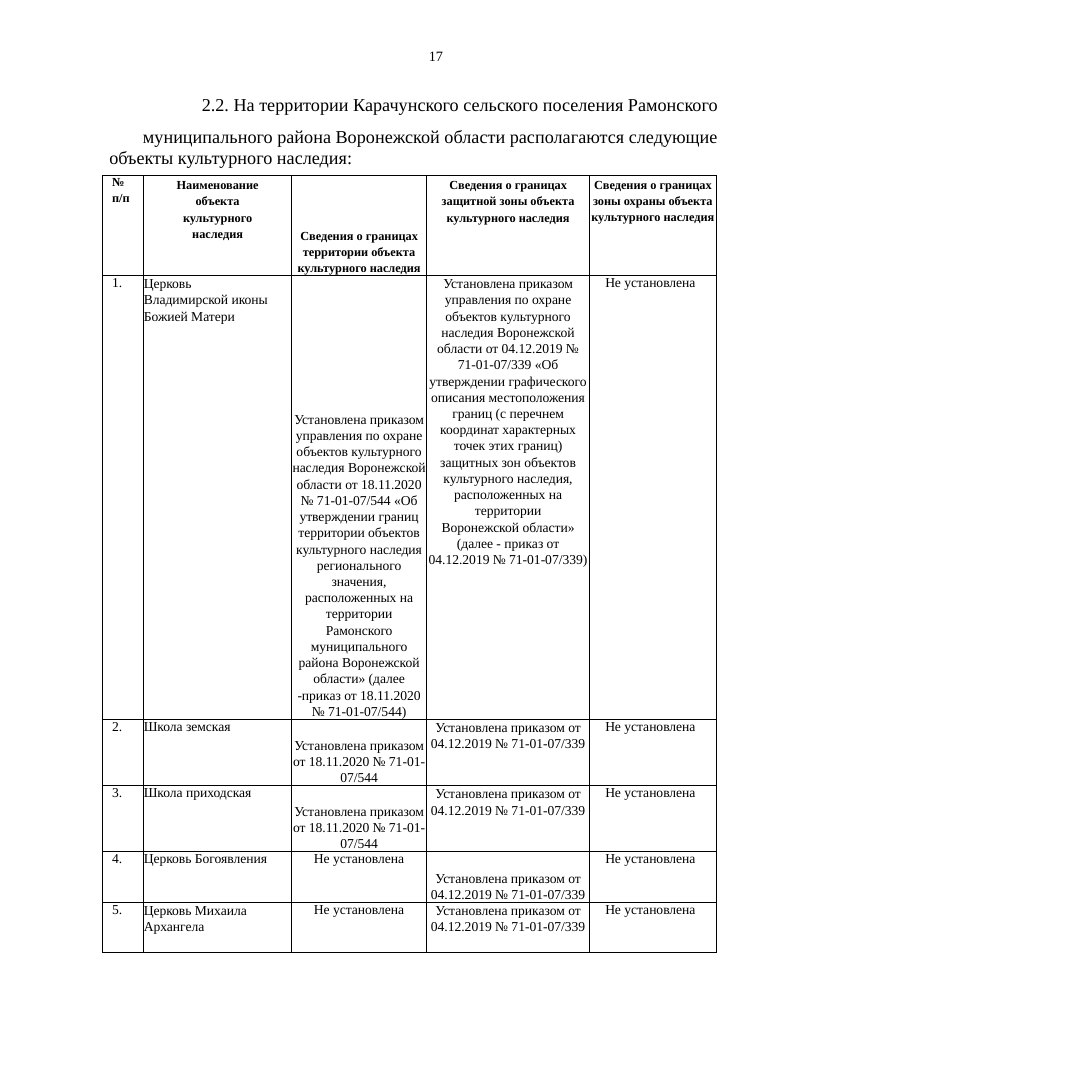
from lxml.etree import SubElement
from pptx import Presentation
from pptx.dml.color import RGBColor
from pptx.enum.text import MSO_ANCHOR, PP_ALIGN
from pptx.oxml.ns import qn
from pptx.util import Inches, Pt

BLACK = RGBColor(0, 0, 0)
FONT = "Times New Roman"
SIDE = 11.69
LEFT, CENTER, RIGHT = PP_ALIGN.LEFT, PP_ALIGN.CENTER, PP_ALIGN.RIGHT

PAGE = "17"
TITLE = ("2.2. На территории Карачунского сельского поселения Рамонского "
         "муниципального района Воронежской области располагаются следующие")
TAIL = "объекты культурного наследия:"

NONE = "Не установлена"
AREA = "Установлена приказом от 18.11.2020 № 71-01-07/544"
ZONE = "Установлена приказом от 04.12.2019 № 71-01-07/339"
AREA_FULL = (
    "Установлена приказом управления по охране объектов культурного наследия "
    "Воронежской области от 18.11.2020 № 71-01-07/544 «Об утверждении границ "
    "территории объектов культурного наследия регионального значения, "
    "расположенных на территории Рамонского муниципального района Воронежской "
    "области» (далее -приказ от 18.11.2020 № 71-01-07/544)")
ZONE_FULL = (
    "Установлена приказом управления по охране объектов культурного наследия "
    "Воронежской области от 04.12.2019 № 71-01-07/339 «Об утверждении "
    "графического описания местоположения границ (с перечнем координат "
    "характерных точек этих границ) защитных зон объектов культурного "
    "наследия, расположенных на территории\n"
    "Воронежской области» (далее - приказ от 04.12.2019 № 71-01-07/339)")

HEAD = ["№\nп/п",
        "Наименование\nобъекта\nкультурного\nнаследия",
        "Сведения о границах территории объекта культурного наследия",
        "Сведения о границах защитной зоны объекта культурного наследия",
        "Сведения о границах зоны охраны объекта культурного наследия"]
SITES = [
    ("Церковь\nВладимирской иконы Божией Матери", AREA_FULL, ZONE_FULL),
    ("Школа земская", AREA, ZONE),
    ("Школа приходская", AREA, ZONE),
    ("Церковь Богоявления", NONE, ZONE),
    ("Церковь Михаила Архангела", NONE, ZONE),
]
COLS = [0.44, 1.58, 1.45, 1.74, 1.36]
ROWS = [1.07, 4.75, 0.71, 0.71, 0.54, 0.54]
HEAD_LEADS = [None, 12.7, 12.5, 12.7, 12.5]
ALIGNS = [LEFT, LEFT, CENTER, CENTER, LEFT]
INDENTS = [0.1, 0, 0, 0, 0.17]
LOW = {(0, 2), (1, 2), (2, 2), (3, 2), (4, 3)}  # bottom-anchored cells


def write(frame, text, size, bold=False, align=LEFT, lead=None, indent=0, after=0):
    """Fill a frame, one paragraph per line; lead is exact line pitch in points."""
    for i, line in enumerate(text.split("\n")):
        para = frame.add_paragraph() if i else frame.paragraphs[0]
        para.alignment = align
        para.space_after = Pt(after)
        if lead:
            para.line_spacing = Pt(lead)
        if indent:
            props = para._p.get_or_add_pPr()
            props.set("marL", str(Inches(indent)))
            props.set("indent", "0")
        run = para.add_run()
        run.text = line
        font = run.font
        font.name, font.size, font.bold = FONT, Pt(size), bold
        font.color.rgb = BLACK


def add_text(slide, box, text, size, wrap=False, **style):
    frame = slide.shapes.add_textbox(*map(Inches, box)).text_frame
    frame.margin_left = frame.margin_right = 0
    frame.margin_top = frame.margin_bottom = 0
    frame.word_wrap = wrap
    write(frame, text, size, **style)


def outline(cell, width=0.75):
    props = cell._tc.get_or_add_tcPr()
    for i, tag in enumerate(("a:lnL", "a:lnR", "a:lnT", "a:lnB")):
        line = props.makeelement(qn(tag), {"w": str(Pt(width))})
        fill = SubElement(line, qn("a:solidFill"))
        SubElement(fill, qn("a:srgbClr"), val=str(BLACK))
        props.insert(i, line)


def add_grid(slide, left, top):
    body = [(f"{n}.", *site, NONE) for n, site in enumerate(SITES, 1)]
    grid = slide.shapes.add_table(
        len(ROWS), len(COLS), Inches(left), Inches(top),
        Inches(sum(COLS)), Inches(sum(ROWS))).table
    grid.first_row = grid.horz_banding = False
    for col, width in zip(grid.columns, COLS):
        col.width = Inches(width)
    for r, texts in enumerate([HEAD] + body):
        grid.rows[r].height = Inches(ROWS[r])
        head = r == 0
        for c, text in enumerate(texts):
            cell = grid.cell(r, c)
            cell.margin_left = cell.margin_right = 0
            cell.margin_top = cell.margin_bottom = 0
            cell.vertical_anchor = MSO_ANCHOR.BOTTOM if (r, c) in LOW else MSO_ANCHOR.TOP
            cell.fill.background()
            outline(cell)
            wide = len(text) > 20  # runs over several lines
            write(cell.text_frame, text, 9.5 if head else 10.5, bold=head,
                  align=CENTER if head and c else ALIGNS[c],
                  lead=HEAD_LEADS[c] if head else 12.5 if wide else None,
                  indent=0 if head and c else INDENTS[c],
                  after=2.1 if head and c == 0 else 0)


def main():
    deck = Presentation()
    deck.slide_width = deck.slide_height = Inches(SIDE)
    slide = deck.slides.add_slide(deck.slide_layouts[6])
    add_text(slide, (4.59, 0.51, 0.18, 0.15), PAGE, 11)
    add_text(slide, (1.17, 0.9, 6.52, 0.55), TITLE, 14, wrap=True, align=RIGHT, lead=24.2)
    add_text(slide, (1.17, 1.57, 2.64, 0.22), TAIL, 14)
    add_grid(slide, 1.1, 1.88)
    deck.save("out.pptx")


if __name__ == "__main__":
    main()
